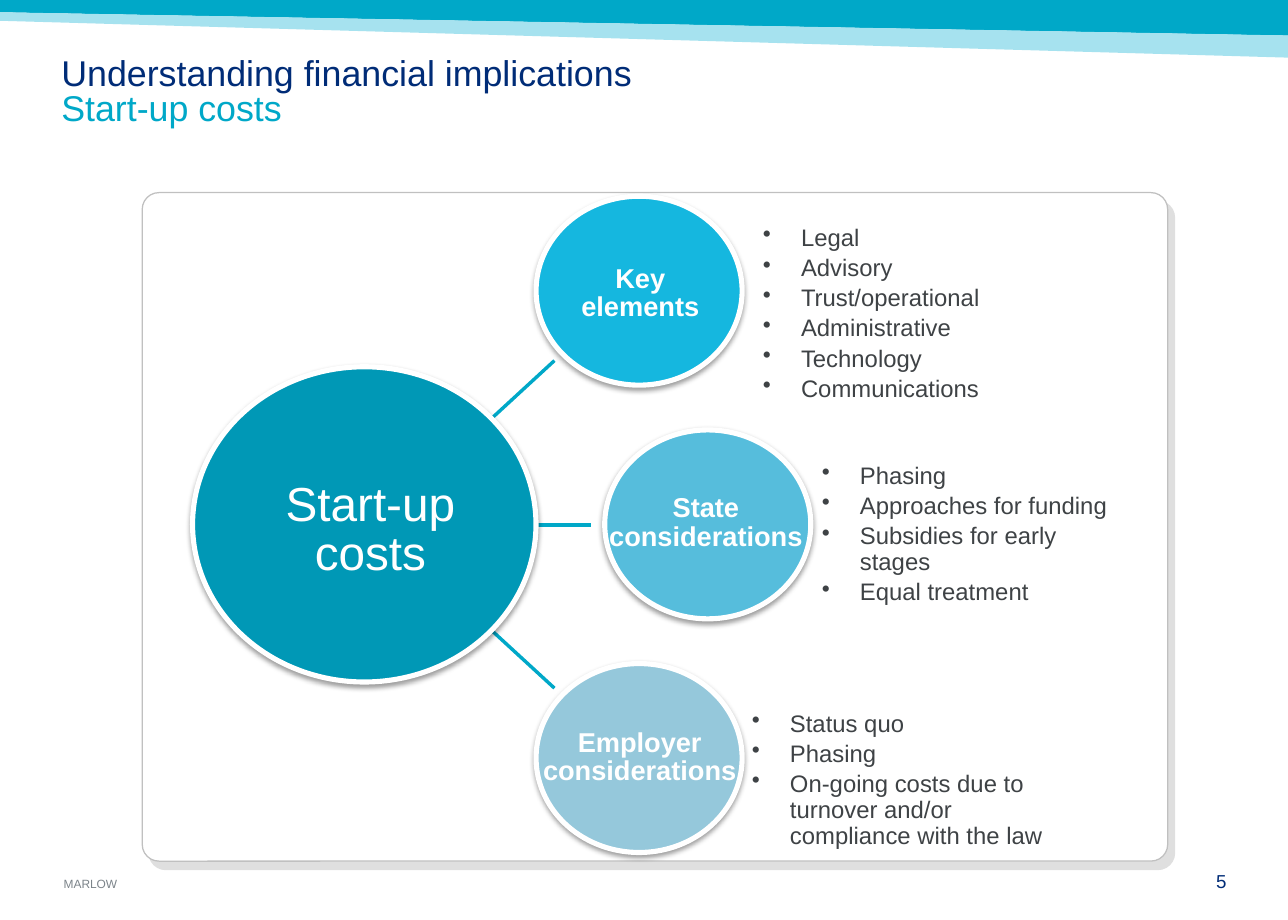
from lxml import etree
from pptx import Presentation
from pptx.dml.color import RGBColor
from pptx.enum.shapes import MSO_CONNECTOR, MSO_SHAPE
from pptx.enum.text import MSO_ANCHOR, PP_ALIGN
from pptx.oxml.ns import nsdecls, qn
from pptx.oxml import parse_xml
from pptx.util import Inches, Pt

ELLIPSE, ROUNDED = MSO_SHAPE.OVAL, MSO_SHAPE.ROUNDED_RECTANGLE
STRAIGHT = MSO_CONNECTOR.STRAIGHT
LEFT, CENTER, RIGHT = PP_ALIGN.LEFT, PP_ALIGN.CENTER, PP_ALIGN.RIGHT
TOP, BOTTOM = MSO_ANCHOR.TOP, MSO_ANCHOR.BOTTOM

COLORS = {
    "teal": "00A8C8", "pale": "A6E2EF", "navy": "002C77", "text": "3E4245",
    "footer": "7C848A", "white": "FFFFFF", "frame": "C0C0C0", "black": "000000",
    "hub": "0098B6", "key": "15B7DF", "state": "56BDDC", "employer": "95C8DB",
}

# Content
TITLE = [("Understanding financial implications", "navy"), ("Start-up costs", "teal")]
FOOTER, PAGE_NUMBER = "MARLOW", "5"
HUB_LABEL = "Start-up\vcosts"
# label, colour, circle left, label box (left, top, width), list (left, top), items
TOPICS = [
    ("Key\velements", "key", 4.37, (4.42, 2.12, 1.6), (6.22, 1.84),
     ["Legal", "Advisory", "Trust/operational", "Administrative", "Technology",
      "Communications"]),
    ("State\vconsiderations", "state", 4.93, (4.78, 3.99, 1.95), (6.7, 3.78),
     ["Phasing", "Approaches for funding", "Subsidies for early stages",
      "Equal treatment"]),
    ("Employer\vconsiderations", "employer", 4.37, (4.24, 5.9, 1.95), (6.13, 5.8),
     ["Status quo", "Phasing",
      "On-going costs due to turnover and/or compliance with the law"]),
]
SPOKES = [(4.02, 3.4, 4.52, 2.94), (4.38, 4.28, 4.82, 4.28), (4.02, 5.15, 4.52, 5.61)]
# Outlines in hundredths of an inch
BANDS = [
    ("teal", [(0, 0), (1050, 0), (1050, 29), (0, 10)]),
    ("pale", [(0, 10), (1050, 29), (1050, 47), (0, 17)]),
]
CIRCLE_TOP, CIRCLE_PITCH, CIRCLE_SIZE = 1.6, 1.905, (1.68, 1.54)
LIST_SIZE, LIST_INDENT = (2.45, 1.3), 0.31

presentation = Presentation()
presentation.slide_width, presentation.slide_height = Inches(10.5), Inches(7.5)
slide = presentation.slides.add_slide(presentation.slide_layouts[6])
shapes = slide.shapes


def rgb(name):
    return RGBColor.from_string(COLORS[name])


def add_shadow(shape, color, alpha, blur, distance, angle):
    properties = shape._element.spPr
    for old in properties.findall(qn("a:effectLst")):
        properties.remove(old)
    properties.append(parse_xml(
        f'<a:effectLst {nsdecls("a")}><a:outerShdw blurRad="{Pt(blur)}" '
        f'dist="{Pt(distance)}" dir="{angle * 60000}" algn="ctr" rotWithShape="0">'
        f'<a:srgbClr val="{COLORS[color]}"><a:alpha val="{alpha * 1000}"/></a:srgbClr>'
        '</a:outerShdw></a:effectLst>'))


def add_filled(kind, box, fill, line, width):
    shape = shapes.add_shape(kind, *map(Inches, box))
    shape.fill.solid()
    shape.fill.fore_color.rgb = rgb(fill)
    shape.line.color.rgb = rgb(line)
    shape.line.width = Pt(width)
    return shape


def add_circle(box, fill):
    add_shadow(add_filled(ELLIPSE, box, fill, "white", 3), "black", 38, 3.1, 1.6, 90)


def add_text(box, lines, size, color, bold=False, align=LEFT, spacing=None,
             margins=(0, 0, 0, 0), anchor=TOP):
    frame = shapes.add_textbox(*map(Inches, box)).text_frame
    frame.word_wrap = True
    frame.vertical_anchor = anchor
    (frame.margin_left, frame.margin_top,
     frame.margin_right, frame.margin_bottom) = map(Inches, margins)
    frame.text = "\n".join(lines)
    for paragraph in frame.paragraphs:
        paragraph.alignment = align
        paragraph.line_spacing = spacing
        font = paragraph.font
        font.name, font.size, font.bold = "Arial", Pt(size), bold
        font.color.rgb = rgb(color)
    return frame


def add_label(box, label, size, bold):
    add_text(box, [label], size, "white", bold, CENTER, 0.86, (0.1, 0.05, 0.1, 0.05))


def add_bullets(paragraph):
    paragraph.space_after = Pt(2.6)
    properties = paragraph._p.get_or_add_pPr()
    properties.set("marL", str(Inches(LIST_INDENT)))
    properties.set("indent", str(-Inches(LIST_INDENT)))
    bullet = parse_xml(f'<a:buChar {nsdecls("a")} char="•"/>')
    properties.find(qn("a:spcAft")).addnext(bullet)


# Header bands
for color, points in BANDS:
    builder = shapes.build_freeform(*points[0], scale=Inches(0.01))
    builder.add_line_segments(points[1:], close=True)
    band = builder.convert_to_shape()
    band.shadow.inherit = False
    band.fill.solid()
    band.fill.fore_color.rgb = rgb(color)
    band.line.fill.background()

# Title, footer and page number
title = add_text((0.5, 0.42, 9.5, 0.76), [line for line, _ in TITLE], 21, "navy",
                 spacing=0.83, margins=(0, 0.05, 0.1, 0.05))
for paragraph, (_, color) in zip(title.paragraphs, TITLE):
    paragraph.font.color.rgb = rgb(color)
add_text((0.52, 7.15, 3.16, 0.11), [FOOTER], 7, "footer", anchor=BOTTOM)
add_text((9.51, 7.09, 0.49, 0.18), [PAGE_NUMBER], 11, "navy", align=RIGHT)

# Panel
panel = add_filled(ROUNDED, (1.16, 1.57, 8.36, 5.45), "white", "frame", 0.75)
panel.adjustments[0] = 0.025
add_shadow(panel, "frame", 50, 0, 6.4, 51)

# Spokes from the hub to the topics
for spoke in SPOKES:
    connector = shapes.add_connector(STRAIGHT, *map(Inches, spoke))
    connector.line.color.rgb = rgb("teal")
    connector.line.width = Pt(2)
    etree.SubElement(connector._element.spPr, qn("a:effectLst"))

# Hub
add_circle((1.57, 2.99, 2.8, 2.57), "hub")
add_label((2.22, 3.88, 1.6, 0.82), HUB_LABEL, 28, False)

# Topics with their lists
for row, (label, color, left, label_box, list_corner, items) in enumerate(TOPICS):
    add_circle((left, CIRCLE_TOP + row * CIRCLE_PITCH, *CIRCLE_SIZE), color)
    add_label((*label_box, 0.56), label, 16, True)
    bullets = add_text((*list_corner, *LIST_SIZE), items, 14, "text", spacing=0.9)
    for paragraph in bullets.paragraphs:
        add_bullets(paragraph)

presentation.save("out.pptx")
